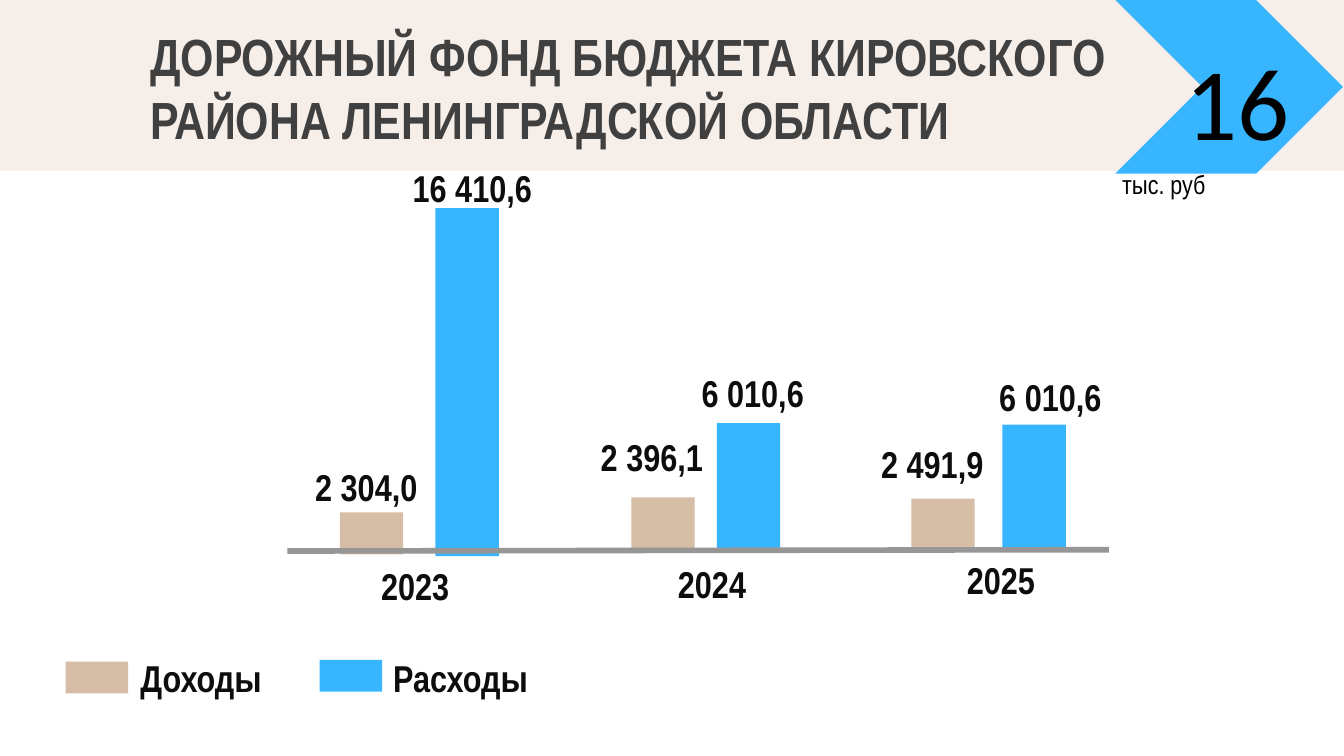
from dataclasses import dataclass

from lxml.etree import SubElement
from pptx import Presentation
from pptx.dml.color import RGBColor
from pptx.enum.shapes import MSO_CONNECTOR, MSO_SHAPE
from pptx.enum.text import PP_ALIGN
from pptx.oxml.ns import qn
from pptx.util import Pt


@dataclass(frozen=True)
class Theme:
    band: str = "F5EEE9"
    income: str = "D6BDA6"
    expense: str = "37B6FF"
    axis: str = "969696"
    title: str = "404040"
    label: str = "0D0D0D"
    black: str = "000000"
    font: str = "Arial Narrow"
    number_font: str = "Calibri"
    title_size: float = 28
    label_size: float = 20
    unit_size: float = 14
    number_size: float = 55


class SlideBuilder:
    def __init__(self, s, theme):
        self.s = s
        self.t = theme

    def shape(self, x, y, w, h, color, kind=MSO_SHAPE.RECTANGLE):
        sp = self.s.shapes.add_shape(kind, Pt(x), Pt(y), Pt(w), Pt(h))
        sp.shadow.inherit = False
        sp.fill.solid()
        sp.fill.fore_color.rgb = RGBColor.from_string(color)
        sp.line.fill.background()

    def line(self, x1, y1, x2, y2, color, width):
        ln = self.s.shapes.add_connector(
            MSO_CONNECTOR.STRAIGHT, Pt(x1), Pt(y1), Pt(x2), Pt(y2))
        ln.line.color.rgb = RGBColor.from_string(color)
        ln.line.width = Pt(width)
        SubElement(ln._element.spPr, qn("a:effectLst"))

    def text(self, x, y, w, h, text, size, color, font=None, bold=False,
             align=PP_ALIGN.LEFT, inset=True, wrap=True, spacing=None):
        tf = self.s.shapes.add_textbox(Pt(x), Pt(y), Pt(w), Pt(h)).text_frame
        tf.word_wrap = wrap
        if not inset:
            for side in ("left", "top", "right", "bottom"):
                setattr(tf, f"margin_{side}", 0)
        p = tf.paragraphs[0]
        p.alignment = align
        if spacing:
            p.line_spacing = Pt(spacing)
        r = p.add_run()
        r.text = text
        style = {"name": font or self.t.font, "size": Pt(size), "bold": bold}
        for name, value in style.items():
            setattr(r.font, name, value)
        r.font.color.rgb = RGBColor.from_string(color)

    def label(self, x, y, text):
        self.text(x, y, 96.5, 31.5, text, self.t.label_size, self.t.label,
                  bold=True, align=PP_ALIGN.CENTER)


def main():
    prs = Presentation()
    prs.slide_width, prs.slide_height = Pt(720), Pt(405)
    t = Theme()
    b = SlideBuilder(prs.slides.add_slide(prs.slide_layouts[6]), t)

    # Header
    b.shape(0, 0, 720, 91.5, t.band)
    b.shape(597.5, 0, 122, 93, t.expense, MSO_SHAPE.CHEVRON)
    b.text(594, 86.5, 60, 24.5, "тыс. руб", t.unit_size, t.black, wrap=False)
    b.text(635, -3.5, 68.5, 80.5, "16", t.number_size, t.black,
           font=t.number_font, inset=False, spacing=89.6)
    b.text(80.5, 13, 523.5, 67.5,
           "ДОРОЖНЫЙ ФОНД БЮДЖЕТА КИРОВСКОГО РАЙОНА ЛЕНИНГРАДСКОЙ ОБЛАСТИ",
           t.title_size, t.title, bold=True, inset=False)

    # Bars: x, top, height, colour
    bars = [
        (233.3, 111.5, 186.5, t.expense),
        (182, 274.5, 22.5, t.income),
        (338.2, 266.5, 28, t.income),
        (488.2, 267.2, 28, t.income),
        (384, 226.7, 67.7, t.expense),
        (537, 227.5, 67.7, t.expense),
    ]
    for x, top, height, color in bars:
        b.shape(x, top, 34, height, color)

    # Axis
    b.line(154, 295.2, 594, 294.5, t.axis, 3)

    # Years and values: x, y, text
    labels = [
        (174.2, 298.2, "2023"), (333.2, 296.9, "2024"), (488, 294.8, "2025"),
        (148, 245, "2 304,0"), (301, 229, "2 396,1"), (451.2, 232.7, "2 491,9"),
        (204.8, 85, "16 410,6"), (355, 195, "6 010,6"), (514.5, 196.7, "6 010,6"),
    ]
    for x, y, text in labels:
        b.label(x, y, text)

    # Legend: swatch x, swatch y, label x, name, colour
    legend = [
        (35.2, 354.5, 59.5, "Доходы", t.income),
        (171.2, 353.5, 198.5, "Расходы", t.expense),
    ]
    for x, y, label_x, name, color in legend:
        b.shape(x, y, 33.5, 17, color)
        b.label(label_x, 347.5, name)

    prs.save("out.pptx")


if __name__ == "__main__":
    main()
